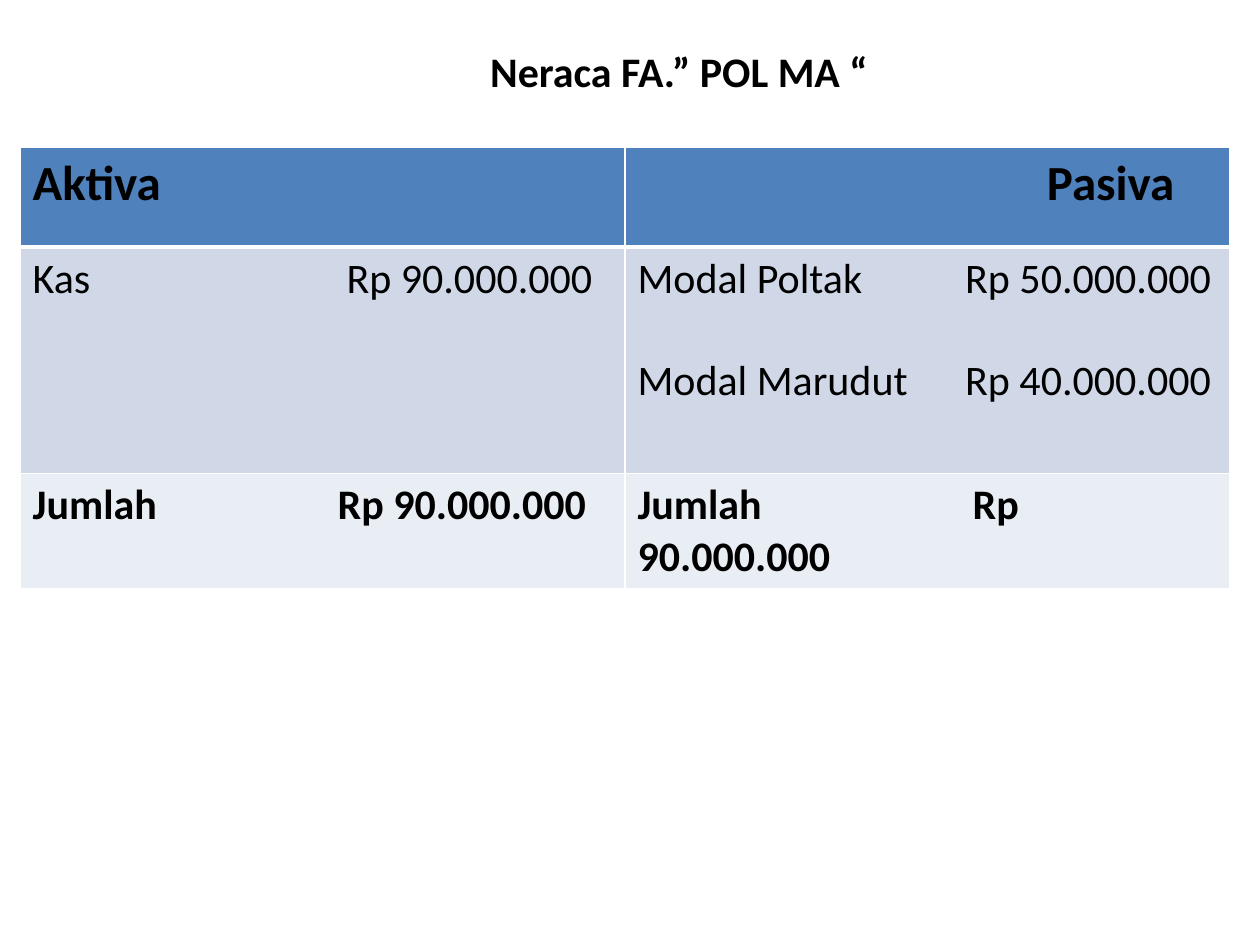
"""Build a balance sheet slide with assets on the left and equity on the right."""
from pptx import Presentation
from pptx.dml.color import RGBColor as Color
from pptx.enum.text import MSO_ANCHOR as Anchor, MSO_AUTO_SIZE as AutoSize, PP_ALIGN as Align
from pptx.oxml import parse_xml
from pptx.oxml.ns import nsdecls
from pptx.util import Inches, Pt

COLORS = {"text": "000000", "header": "4F81BD", "body": "D0D8E8", "total": "E9EDF4", "line": "FFFFFF"}


def format_para(para, size, bold):
    for span in para.runs:
        span.font.name = "Calibri"
        span.font.size = Pt(size)
        span.font.bold = bold
        span.font.color.rgb = Color.from_string(COLORS["text"])


def add_border(cell, side, width):
    cell._tc.get_or_add_tcPr().append(parse_xml(
        f'<a:{side} {nsdecls("a")} w="{Pt(width)}"><a:solidFill>'
        f'<a:srgbClr val="{COLORS["line"]}"/></a:solidFill></a:{side}>'))


deck = Presentation()
deck.slide_width, deck.slide_height = Inches(10), Inches(7.5)
page = deck.slides.add_slide(deck.slide_layouts[5])

title = page.shapes.title
title.left, title.top, title.width, title.height = Inches(3.79), Inches(0.31), Inches(3.32), Inches(0.5)
title.text_frame.text = "Neraca FA.” POL MA “"
title.text_frame.auto_size = AutoSize.NONE
title.text_frame.vertical_anchor = Anchor.TOP
title.text_frame.paragraphs[0].alignment = Align.LEFT
format_para(title.text_frame.paragraphs[0], 24, True)

rows = [
    ("header", 0.79, 28, True, [["Aktiva"], ["Pasiva"]], [0, 0]),
    ("body", 1.8, 24, False,
     [["Kas\tRp 90.000.000"], ["Modal Poltak\tRp 50.000.000", "Modal Marudut\tRp 40.000.000"]], [2.49, 2.6]),
    ("total", 0.69, 24, True, [["Jumlah\tRp 90.000.000"], ["Jumlah\tRp 90.000.000"]], [2.42, 2.66]),
]
table = page.shapes.add_table(
    len(rows), 2, Inches(0.16), Inches(1.17), Inches(9.6), Inches(3.28)).table
for column in table.columns:
    column.width = Inches(4.8)

for row_index, (fill, height, size, bold, entries, tabs) in enumerate(rows):
    table.rows[row_index].height = Inches(height)
    for column_index, (lines, tab) in enumerate(zip(entries, tabs)):
        cell = table.cell(row_index, column_index)
        cell.text_frame.text = "\n".join(lines)
        for line_index, para in enumerate(cell.text_frame.paragraphs):
            format_para(para, size, bold)
            if line_index:
                para.space_before = Pt(29)
            if tab:
                para._p.get_or_add_pPr().append(parse_xml(
                    f'<a:tabLst {nsdecls("a")}><a:tab pos="{Inches(tab)}" algn="l"/></a:tabLst>'))
        for side in ("lnL", "lnR", "lnT", "lnB"):
            add_border(cell, side, 3 if fill == "header" and side == "lnB" else 1)
        cell.fill.solid()
        cell.fill.fore_color.rgb = Color.from_string(COLORS[fill])

equity_header = table.cell(0, 1)
equity_header.text_frame.paragraphs[0].alignment = Align.RIGHT
equity_header.margin_right = Inches(0.44)

deck.save("out.pptx")
